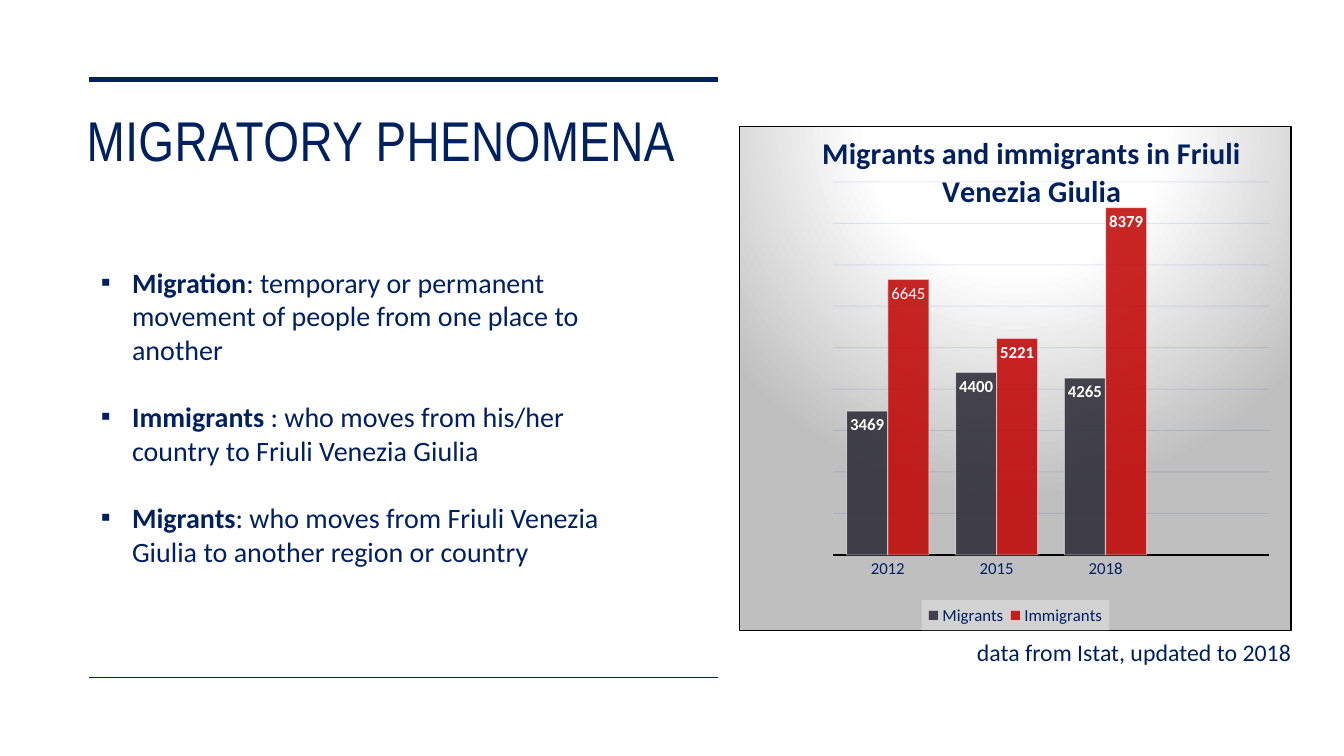
from dataclasses import dataclass

from pptx import Presentation
from pptx.chart.chart import Chart
from pptx.chart.data import CategoryChartData
from pptx.dml.color import RGBColor
from pptx.enum.chart import XL_CHART_TYPE as ChartType
from pptx.enum.chart import XL_LABEL_POSITION as LabelPosition
from pptx.enum.chart import XL_LEGEND_POSITION as LegendPosition
from pptx.enum.chart import XL_TICK_MARK as TickMark
from pptx.enum.shapes import MSO_CONNECTOR as ConnectorType
from pptx.enum.text import MSO_ANCHOR as Anchor
from pptx.enum.text import MSO_AUTO_SIZE as AutoSize
from pptx.enum.text import PP_ALIGN as Align
from pptx.oxml import parse_xml
from pptx.oxml.ns import nsdecls, qn
from pptx.slide import Slide
from pptx.util import Inches, Pt

NAVY, WHITE, BLACK = "002060", "FFFFFF", "000000"
BODY_FONT = "Calibri"


@dataclass
class Rule:
    top: float
    weight: float


@dataclass
class Definition:
    term: str
    meaning: str


@dataclass
class Series:
    name: str
    values: tuple
    color: str


RULES = [Rule(0.79, 3.5), Rule(6.72, 1)]
DEFINITIONS = [
    Definition("Migration", ": temporary or permanent movement of people from one place to another"),
    Definition("Immigrants", " : who moves from his/her country to Friuli Venezia Giulia"),
    Definition("Migrants", ": who moves from Friuli Venezia Giulia to another region or country"),
]
CATEGORIES = ("2012", "2015", "2018", "")
SERIES = [
    Series("Migrants", (3469, 4400, 4265, None), "292834"),
    Series("Immigrants", (6645, 5221, 8379, None), "C00000"),
]


def rgb(color: str) -> RGBColor:
    return RGBColor.from_string(color)


def format_font(font, size: float, color: str = NAVY, bold: bool = False, name: str = BODY_FONT) -> None:
    font.name, font.size, font.bold = name, Pt(size), bold
    font.color.rgb = rgb(color)


def add_text(paragraph, text: str, **font_format):
    run = paragraph.add_run()
    run.text = text
    format_font(run.font, **font_format)
    return run


def format_line(line, color: str, weight: float) -> None:
    line.color.rgb = rgb(color)
    line.width = Pt(weight)


def set_opacity(element, query: str, percent: int) -> None:
    for color in element.xpath(query):
        color.append(parse_xml(f'<a:alpha {nsdecls("a")} val="{percent * 1000}"/>'))


def move(shape, left: float, top: float, width: float, height: float) -> None:
    shape.left, shape.top = Inches(left), Inches(top)
    shape.width, shape.height = Inches(width), Inches(height)


def set_layout(parent, index: int, target: str = "", **fractions: float) -> None:
    """Place a part of the chart by fractions of the chart's size."""
    for layout in parent.findall(qn("c:layout")):
        parent.remove(layout)
    parts = f'<c:layoutTarget val="{target}"/>' if target else ""
    parts += "".join(f'<c:{axis}Mode val="edge"/>' for axis in "xy")
    parts += "".join(f'<c:{key} val="{value}"/>' for key, value in fractions.items())
    parent.insert(index, parse_xml(
        f'<c:layout {nsdecls("c")}><c:manualLayout>{parts}</c:manualLayout></c:layout>'))


def add_rule(slide: Slide, rule: Rule) -> None:
    top = Inches(rule.top)
    line = slide.shapes.add_connector(ConnectorType.STRAIGHT, Inches(0.88), top, Inches(7.12), top)
    format_line(line.line, NAVY, rule.weight)
    line.element.spPr.append(parse_xml(f'<a:effectLst {nsdecls("a")}/>'))


def add_definitions(body) -> None:
    move(body, 0.9, 2.58, 5.39, 3.13)
    frame = body.text_frame
    frame.auto_size = AutoSize.NONE
    for index, definition in enumerate(DEFINITIONS):
        paragraph = frame.add_paragraph() if index else frame.paragraphs[0]
        paragraph.space_before = Pt(24 if index else 0)
        properties = paragraph._p.get_or_add_pPr()
        properties.set("marL", str(Inches(0.31)))
        properties.set("indent", str(Inches(-0.31)))
        properties.append(parse_xml(f'<a:buChar {nsdecls("a")} char="▪"/>'))
        add_text(paragraph, definition.term, size=20, bold=True)
        add_text(paragraph, definition.meaning, size=20)


def format_series(series, color: str) -> None:
    series.format.fill.solid()
    series.format.fill.fore_color.rgb = rgb(color)
    series.invert_if_negative = False
    format_line(series.format.line, WHITE, 0.75)
    set_opacity(series._element, "c:spPr/a:solidFill/a:srgbClr", 85)
    set_opacity(series._element, "c:spPr/a:ln/a:solidFill/a:srgbClr", 50)
    labels = series.data_labels
    labels.show_value = True
    labels.position = LabelPosition.INSIDE_END
    format_font(labels.font, 12, WHITE, bold=True)


def format_frame(chart: Chart) -> None:
    stops = "".join(
        f'<a:gs pos="{position * 1000}"><a:srgbClr val="{color}"/></a:gs>'
        for position, color in ((0, WHITE), (39, WHITE), (100, "BFBFBF")))
    chart.element.find(qn("c:chart")).addnext(parse_xml(
        f'<c:spPr {nsdecls("c", "a")}><a:gradFill><a:gsLst>{stops}</a:gsLst>'
        '<a:path path="circle"><a:fillToRect l="50000" t="-80000" r="50000" b="180000"/></a:path>'
        f'</a:gradFill><a:ln w="{Pt(0.75)}"><a:solidFill><a:srgbClr val="{BLACK}"/></a:solidFill></a:ln></c:spPr>'))


def format_axes(chart: Chart) -> None:
    years, counts = chart.category_axis, chart.value_axis
    years.major_tick_mark = TickMark.NONE
    format_line(years.format.line, BLACK, 1.5)
    format_font(years.tick_labels.font, 12)
    counts.minimum_scale, counts.maximum_scale, counts.major_unit = 0, 9000, 1000
    counts.visible = False
    format_line(counts.major_gridlines.format.line, "002775", 0.75)
    set_opacity(chart.element, ".//c:majorGridlines//a:srgbClr", 10)


def format_legend(chart: Chart) -> None:
    chart.has_legend = True
    legend = chart.legend
    legend.position = LegendPosition.BOTTOM
    legend.include_in_layout = False
    format_font(legend.font, 12)
    element = chart.element.xpath(".//c:legend")[0]
    set_layout(element, 1, x=0.33, y=0.94, w=0.34, h=0.06)
    element.find(qn("c:txPr")).addprevious(parse_xml(
        f'<c:spPr {nsdecls("c", "a")}><a:solidFill><a:srgbClr val="F2F2F2">'
        '<a:alpha val="39000"/></a:srgbClr></a:solidFill></c:spPr>'))


def add_migration_chart(slide: Slide) -> None:
    data = CategoryChartData()
    data.categories = CATEGORIES
    for series in SERIES:
        data.add_series(series.name, series.values)
    chart = slide.shapes.add_chart(ChartType.COLUMN_CLUSTERED, Inches(7.33), Inches(1.25),
                                   Inches(5.48), Inches(5.01), data).chart
    format_font(chart.font, 10)
    format_frame(chart)
    # Title at the top edge, clear of the tallest column
    chart.has_title = True
    add_text(chart.chart_title.text_frame.paragraphs[0],
             "Migrants and immigrants in Friuli Venezia Giulia", size=21.6, bold=True)
    set_layout(chart.element.xpath(".//c:chart/c:title")[0], 1, x=0.14, y=0)
    set_layout(chart.element.xpath(".//c:plotArea")[0], 0, "inner", x=0.17, y=0.11, w=0.79, h=0.74)
    plot = chart.plots[0]
    plot.gap_width, plot.overlap, plot.vary_by_categories = 65, 0, False
    for drawn, series in zip(plot.series, SERIES):
        format_series(drawn, series.color)
    # The first immigrant label is not bold
    label = plot.series[1].points[0].data_label
    add_text(label.text_frame.paragraphs[0], "6645", size=12, color=WHITE)
    label.position = LabelPosition.INSIDE_END
    format_axes(chart)
    format_legend(chart)


def main() -> None:
    presentation = Presentation()
    presentation.slide_width, presentation.slide_height = Inches(13.33), Inches(7.5)
    slide = presentation.slides.add_slide(presentation.slide_layouts[1])
    # Title between the rules
    title = slide.shapes.title
    move(title, 0.76, 0.97, 6.49, 0.81)
    title.text_frame.auto_size = AutoSize.NONE
    title.text_frame.vertical_anchor = Anchor.MIDDLE
    heading = title.text_frame.paragraphs[0]
    heading.alignment = Align.LEFT
    run = add_text(heading, "MIGRATORY PHENOMENA", size=40, name="Arial Narrow")
    run.font._element.set("spc", "30")
    for rule in RULES:
        add_rule(slide, rule)
    # Definitions, chart and its source
    add_definitions(slide.placeholders[1])
    add_migration_chart(slide)
    caption = slide.shapes.add_textbox(Inches(9.59), Inches(6.28), Inches(4.17), Inches(0.39))
    caption.text_frame.word_wrap = True
    add_text(caption.text_frame.paragraphs[0], "data from Istat, updated to 2018", size=17)
    presentation.save("out.pptx")


if __name__ == "__main__":
    main()
